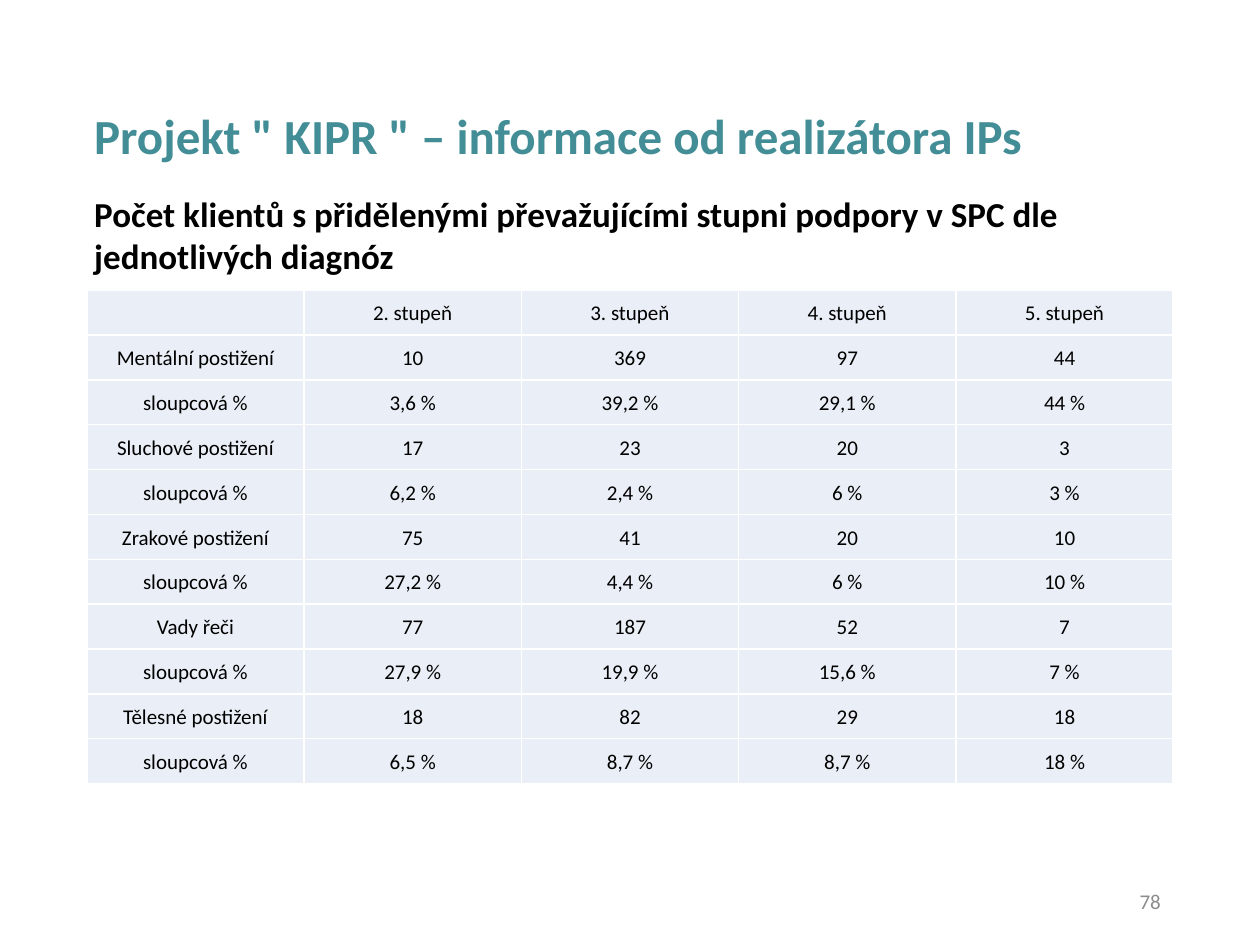
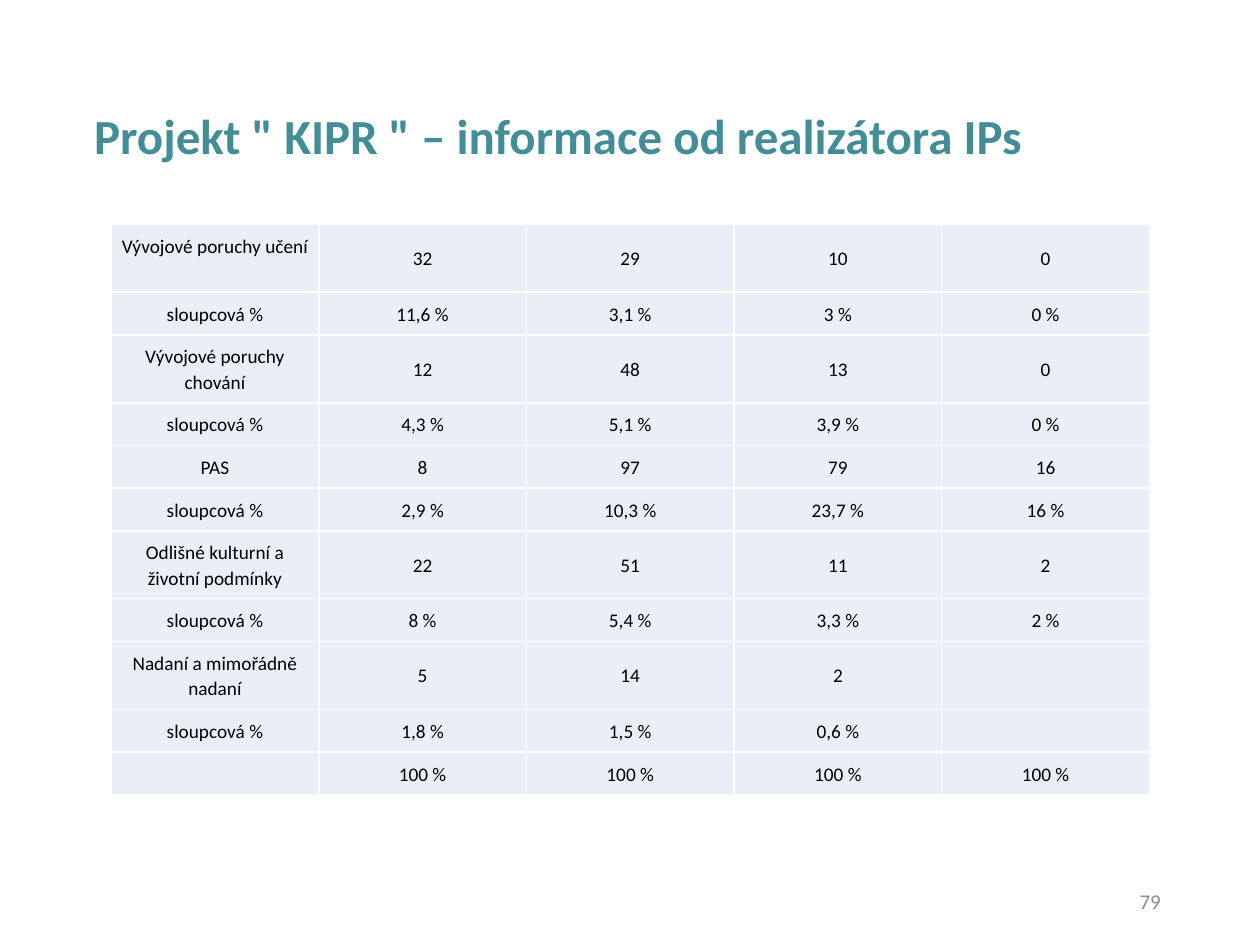
"""Builds two slides with tables of client counts by diagnosis and support level."""
from lxml import etree
from pptx import Presentation
from pptx import util as u
from pptx.dml.color import RGBColor
from pptx.enum import text
from pptx.oxml import ns

TEAL = RGBColor(0x42, 0x8D, 0x96)
BLACK = RGBColor(0, 0, 0)
GREY = RGBColor(0x8C, 0x8C, 0x8C)
PALE = RGBColor(0xEA, 0xEF, 0xF7)
WHITE = RGBColor(0xFF, 0xFF, 0xFF)
FONT = "Calibri"
LEFT, WIDE = 1.75, 21.9
COLS = 5
TITLE = 'Projekt " KIPR " – informace od realizátora IPs'
LEAD = "Počet klientů s přidělenými převažujícími stupni podpory v SPC dle jednotlivých diagnóz"
HEAD = ["", "2. stupeň", "3. stupeň", "4. stupeň", "5. stupeň"]
TOTAL = [""] + ["100 %"] * 4

FIRST = [
    ("Mentální postižení", "10 369 97 44", "3,6 39,2 29,1 44"),
    ("Sluchové postižení", "17 23 20 3", "6,2 2,4 6 3"),
    ("Zrakové postižení", "75 41 20 10", "27,2 4,4 6 10"),
    ("Vady řeči", "77 187 52 7", "27,9 19,9 15,6 7"),
    ("Tělesné postižení", "18 82 29 18", "6,5 8,7 8,7 18"),
]
SECOND = [
    ("Vývojové poruchy učení", "32 29 10 0", "11,6 3,1 3 0"),
    ("Vývojové poruchy chování", "12 48 13 0", "4,3 5,1 3,9 0"),
    ("PAS", "8 97 79 16", "2,9 10,3 23,7 16"),
    ("Odlišné kulturní a životní podmínky", "22 51 11 2", "8 5,4 3,3 2"),
    ("Nadaní a mimořádně nadaní", "5 14 2", "1,8 1,5 0,6"),
]


def expand(groups):
    """Return a count row and a percentage row for each diagnosis."""
    rows = []
    for name, counts, shares in groups:
        rows.append([name] + counts.split())
        rows.append(["sloupcová %"] + [f"{s} %" for s in shares.split()])
    return [row + [""] * (COLS - len(row)) for row in rows]


class Deck:
    """Holds the shared style and the current slide."""

    def __init__(self):
        self.prs = Presentation()
        self.prs.slide_width = u.Cm(25.4)
        self.prs.slide_height = u.Cm(19.05)
        self.slide = None

    def page(self, number):
        """Start a slide with its title and page number."""
        self.slide = self.prs.slides.add_slide(self.prs.slide_layouts[6])
        self.label(TITLE, (LEFT, 1.55, WIDE, 2.49), 28, TEAL, bold=True,
                   anchor=text.MSO_ANCHOR.MIDDLE, space=0.9)
        self.label(str(number), (17.93, 17.65, 5.72, 1.02), 12, GREY,
                   anchor=text.MSO_ANCHOR.MIDDLE, align=text.PP_ALIGN.RIGHT, pad=0.25)

    def run(self, para, words, size, color, bold=False):
        """Add one styled run."""
        run = para.add_run()
        run.text = words
        font = run.font
        font.name, font.size, font.bold = FONT, u.Pt(size), bold
        font.color.rgb = color

    def label(self, words, box, size, color, bold=False, anchor=text.MSO_ANCHOR.TOP,
              align=text.PP_ALIGN.LEFT, space=1.0, pad=0.15):
        """Add a text box."""
        frame = self.slide.shapes.add_textbox(*map(u.Cm, box)).text_frame
        frame.word_wrap = True
        frame.vertical_anchor = anchor
        frame.margin_left = frame.margin_right = u.Cm(pad)
        frame.margin_top = frame.margin_bottom = u.Cm(0.15)
        para = frame.paragraphs[0]
        para.alignment, para.line_spacing = align, space
        self.run(para, words, size, color, bold)

    def edge(self, cell):
        """Draw thin white lines around a cell."""
        props = cell._tc.get_or_add_tcPr()
        for side in "LRTB":
            line = etree.SubElement(props, ns.qn(f"a:ln{side}"), w=str(u.Pt(1)))
            fill = etree.SubElement(line, ns.qn("a:solidFill"))
            etree.SubElement(fill, ns.qn("a:srgbClr"), val=str(WHITE))

    def cell(self, cell, words, size, anchor):
        """Fill and style one table cell."""
        self.edge(cell)
        cell.fill.solid()
        cell.fill.fore_color.rgb = PALE
        cell.vertical_anchor = anchor
        cell.margin_left = cell.margin_right = u.Cm(0.18)
        cell.margin_top = cell.margin_bottom = u.Cm(0.18)
        para = cell.text_frame.paragraphs[0]
        para.alignment, para.line_spacing = text.PP_ALIGN.CENTER, 1.07
        if words:
            self.run(para, words, size, BLACK)
        else:
            etree.SubElement(para._p, ns.qn("a:endParaRPr"), sz=str(size * 100))

    def table(self, rows, left, top, wide, size, low, tall):
        """Add a table whose rows are taller where the name is long."""
        highs = [tall if len(row[0]) > 20 else low for row in rows]
        box = map(u.Cm, (left, top, wide, sum(highs)))
        grid = self.slide.shapes.add_table(len(rows), COLS, *box).table
        grid.first_row = grid.horz_banding = False
        for col in grid.columns:
            col.width = u.Cm(wide / COLS)
        for r, row in enumerate(rows):
            grid.rows[r].height = u.Cm(highs[r])
            for c, words in enumerate(row):
                anchor = text.MSO_ANCHOR.MIDDLE if c else text.MSO_ANCHOR.TOP
                self.cell(grid.cell(r, c), words, size, anchor)


def main():
    """Build and save the deck."""
    deck = Deck()
    deck.page(78)
    deck.label(LEAD, (LEFT, 3.73, WIDE, 12.27), 20, BLACK, bold=True)
    deck.table([HEAD] + expand(FIRST), LEFT, 5.85, WIDE, 12, 0.9, 0.9)
    deck.page(79)
    deck.table(expand(SECOND) + [TOTAL], 2.24, 4.52, 20.93, 11, 0.86, 1.37)
    deck.prs.save("out.pptx")


if __name__ == "__main__":
    main()
